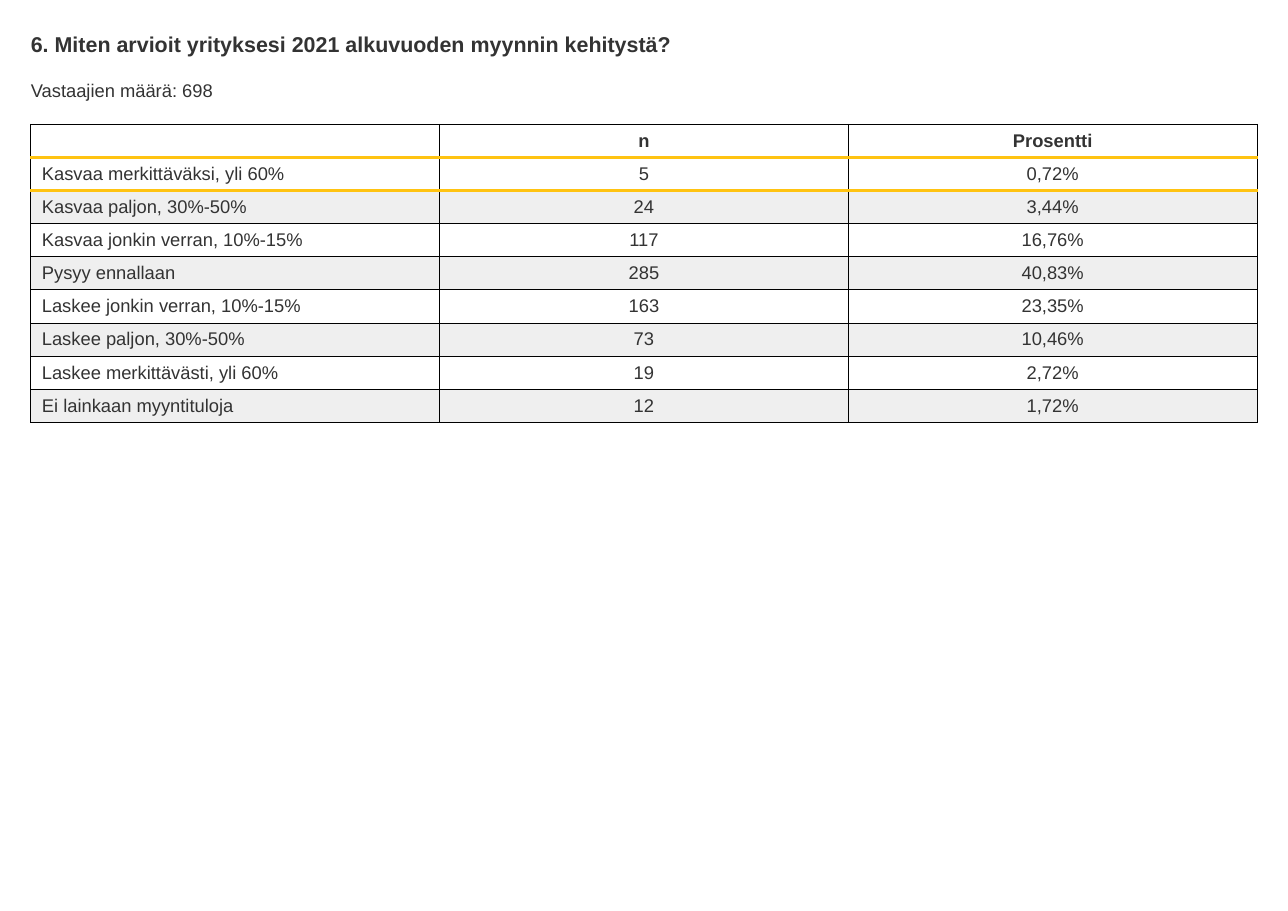
"""Build the survey slide on expected sales in early 2021."""
from dataclasses import dataclass

from lxml.etree import SubElement
from pptx import Presentation
from pptx.dml.color import RGBColor as RGB
from pptx.enum.text import MSO_ANCHOR as Anchor, PP_ALIGN as Align
from pptx.oxml.ns import qn
from pptx.util import Inches, Pt


@dataclass(frozen=True)
class Theme:
    font: str = "Arial"
    text: str = "333333"
    line: str = "000000"
    accent: str = "FFC311"
    plain: str = "FFFFFF"
    band: str = "EFEFEF"
    title_size: int = 14
    body_size: int = 12
    line_width: float = 0.75
    accent_width: float = 2


@dataclass(frozen=True)
class Grid:
    left: float = 0.28
    top: float = 1.13
    col: float = 3.71
    row: float = 0.3
    cols: int = 3


@dataclass(frozen=True)
class Label:
    text: str
    top: float
    height: float
    size: int
    bold: bool = False


@dataclass(frozen=True)
class Answer:
    label: str
    n: str
    percent: str


THEME = Theme()
GRID = Grid()
LABELS = [
    Label("6. Miten arvioit yrityksesi 2021 alkuvuoden myynnin kehitystä?",
          0.28, 0.23, THEME.title_size, True),
    Label("Vastaajien määrä: 698", 0.72, 0.2, THEME.body_size),
]
ROWS = [
    Answer("", "n", "Prosentti"),
    Answer("Kasvaa merkittäväksi, yli 60%", "5", "0,72%"),
    Answer("Kasvaa paljon, 30%-50%", "24", "3,44%"),
    Answer("Kasvaa jonkin verran, 10%-15%", "117", "16,76%"),
    Answer("Pysyy ennallaan", "285", "40,83%"),
    Answer("Laskee jonkin verran, 10%-15%", "163", "23,35%"),
    Answer("Laskee paljon, 30%-50%", "73", "10,46%"),
    Answer("Laskee merkittävästi, yli 60%", "19", "2,72%"),
    Answer("Ei lainkaan myyntituloja", "12", "1,72%"),
]
ACCENT_EDGES = {1, 2}


def style_text(p, size: int, bold: bool) -> None:
    for r in p.runs:
        r.font.name = THEME.font
        r.font.size = Pt(size)
        r.font.bold = bold
        r.font.color.rgb = RGB.from_string(THEME.text)


def add_label(s, label: Label) -> None:
    tb = s.shapes.add_textbox(Inches(GRID.left), Inches(label.top),
                              Inches(GRID.col * GRID.cols), Inches(label.height))
    tf = tb.text_frame
    tf.word_wrap = True
    tf.margin_left = tf.margin_right = tf.margin_top = tf.margin_bottom = 0
    tf.text = label.text
    style_text(tf.paragraphs[0], label.size, label.bold)


def add_border(cell, side: str, accent: bool) -> None:
    width = THEME.accent_width if accent else THEME.line_width
    ln = SubElement(cell._tc.get_or_add_tcPr(), qn(f"a:ln{side}"), w=str(Pt(width)))
    fill = SubElement(ln, qn("a:solidFill"))
    SubElement(fill, qn("a:srgbClr"), val=THEME.accent if accent else THEME.line)


def fill_cell(cell, text: str, row: int, col: int) -> None:
    edges = {"L": False, "R": False,
             "T": row in ACCENT_EDGES, "B": row + 1 in ACCENT_EDGES}
    for side, accent in edges.items():
        add_border(cell, side, accent)
    banded = row > 0 and row % 2 == 0
    cell.fill.solid()
    cell.fill.fore_color.rgb = RGB.from_string(THEME.band if banded else THEME.plain)
    cell.vertical_anchor = Anchor.MIDDLE
    p = cell.text_frame.paragraphs[0]
    p.alignment = Align.CENTER if col else Align.LEFT
    if text:
        p.text = text
        style_text(p, THEME.body_size, row == 0)
    else:
        SubElement(p._p, qn("a:endParaRPr"), sz=str(THEME.body_size * 100))


def add_answers(s, rows: list[Answer]) -> None:
    frame = s.shapes.add_table(len(rows), GRID.cols, Inches(GRID.left), Inches(GRID.top),
                               Inches(GRID.col * GRID.cols), Inches(GRID.row * len(rows)))
    table = frame.table
    table.horz_banding = False
    for column in table.columns:
        column.width = Inches(GRID.col)
    for i, answer in enumerate(rows):
        table.rows[i].height = Inches(GRID.row)
        for j, text in enumerate((answer.label, answer.n, answer.percent)):
            fill_cell(table.cell(i, j), text, i, j)


def main() -> None:
    prs = Presentation()
    prs.slide_width, prs.slide_height = Inches(11.69), Inches(8.27)
    s = prs.slides.add_slide(prs.slide_layouts[6])
    for label in LABELS:
        add_label(s, label)
    add_answers(s, ROWS)
    prs.save("out.pptx")


if __name__ == "__main__":
    main()
